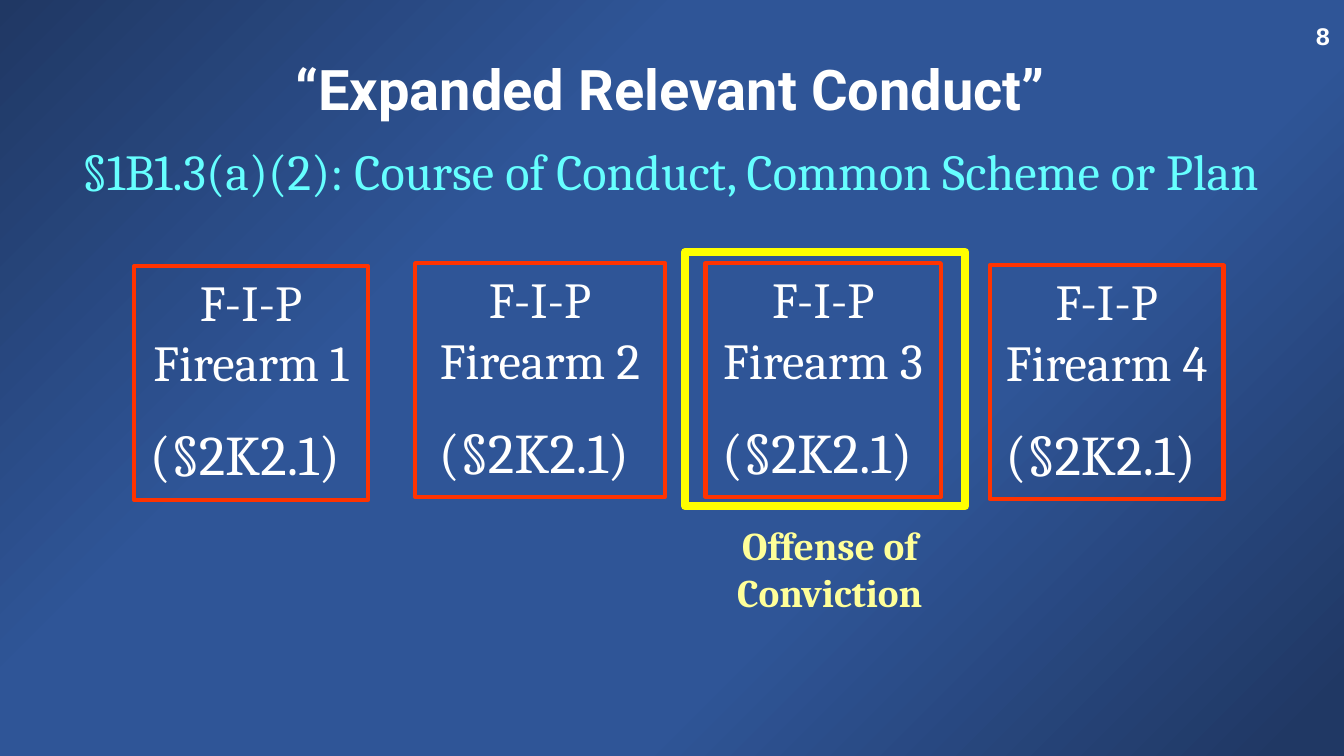
from pptx import Presentation
from pptx import util as u
from pptx.dml.color import RGBColor
from pptx.enum import shapes, text
from pptx.oxml import parse_xml

WHITE = "FFFFFF"
SERIF = "Cambria"
BACKGROUND_STOPS = [(0, "203864"), (33, "2F5597"), (66, "2F5597"), (97, "203864")]
FIREARM_BOXES = [
    (95.75, 190, 167, 167),
    (296.5, 188, 178.5, 167),
    (504, 188, 168, 167),
    (707, 189.5, 167, 167),
]


def color(hex_code):
    return RGBColor.from_string(hex_code)


def points(box):
    return [u.Pt(length) for length in box]


def write(frame, words, size, font=SERIF, ink=WHITE, bold=False,
          align=text.PP_ALIGN.CENTER, line_spacing=None, before=None):
    first = frame.paragraphs[0]
    paragraph = frame.add_paragraph() if first.runs else first
    paragraph.alignment = align
    if line_spacing:
        paragraph.line_spacing = line_spacing
    if before:
        paragraph.space_before = u.Pt(before)
    run = paragraph.add_run()
    run.text = words
    run.font.size = u.Pt(size)
    run.font.name = font
    run.font.bold = bold
    run.font.color.rgb = color(ink)


def text_area(slide, box, anchor=text.MSO_ANCHOR.TOP):
    frame = slide.shapes.add_textbox(*points(box)).text_frame
    frame.word_wrap = True
    frame.vertical_anchor = anchor
    return frame


def outline(slide, box, ink, width):
    border = slide.shapes.add_shape(shapes.MSO_SHAPE.RECTANGLE, *points(box))
    border.shadow.inherit = False
    border.fill.background()
    border.line.color.rgb = color(ink)
    border.line.width = u.Pt(width)
    return border


def paint_background(slide):
    slide.background.fill.solid()
    properties = slide._element.cSld.bg.bgPr
    stops = "".join(
        f'<a:gs pos="{percent * 1000}"><a:srgbClr val="{ink}"/></a:gs>'
        for percent, ink in BACKGROUND_STOPS
    )
    gradient = parse_xml(
        '<a:gradFill xmlns:a="http://schemas.openxmlformats.org/drawingml/2006/main" '
        f'rotWithShape="1"><a:gsLst>{stops}</a:gsLst><a:path path="circle">'
        '<a:fillToRect r="100000" b="100000"/></a:path></a:gradFill>'
    )
    properties.replace(properties[0], gradient)


def add_header(slide, box):
    left, top, width, height = box
    number = text_area(slide, (left + width - 216, top, 216, 29), text.MSO_ANCHOR.MIDDLE)
    write(number, "8", 18, font="Courier New", bold=True, align=text.PP_ALIGN.RIGHT)
    title = text_area(slide, (left, top + 29.5, width, 57))
    write(title, "“Expanded Relevant Conduct”", 40, font="Roboto", bold=True, line_spacing=0.9)
    guideline = text_area(slide, (left, top + height - 51, width, 51))
    write(guideline, "§1B1.3(a)(2): Course of Conduct, Common Scheme or Plan", 36, ink="66FFFF")


def add_firearm(slide, box, number):
    frame = outline(slide, box, "FF3300", 3).text_frame
    frame.word_wrap = True
    frame.vertical_anchor = text.MSO_ANCHOR.TOP
    write(frame, f"F-I-P Firearm {number}", 36)
    write(frame, "(§2K2.1) ", 40, before=20)


def add_conviction(slide, box):
    left, top, width, height = box
    outline(slide, box, "FFFF00", 6)
    label = text_area(slide, (left + 5, top + height + 7, width - 3.5, 75))
    write(label, "Offense of Conviction", 28, ink="FFFF99", bold=True)


def main():
    deck = Presentation()
    deck.slide_width, deck.slide_height = u.Pt(960), u.Pt(540)
    slide = deck.slides.add_slide(deck.slide_layouts[6])
    paint_background(slide)
    add_header(slide, (0, 11, 957.5, 136.5))
    for number, box in enumerate(FIREARM_BOXES, 1):
        add_firearm(slide, box, number)
    add_conviction(slide, (489.5, 180, 200, 181.5))
    deck.save("out.pptx")


if __name__ == "__main__":
    main()
